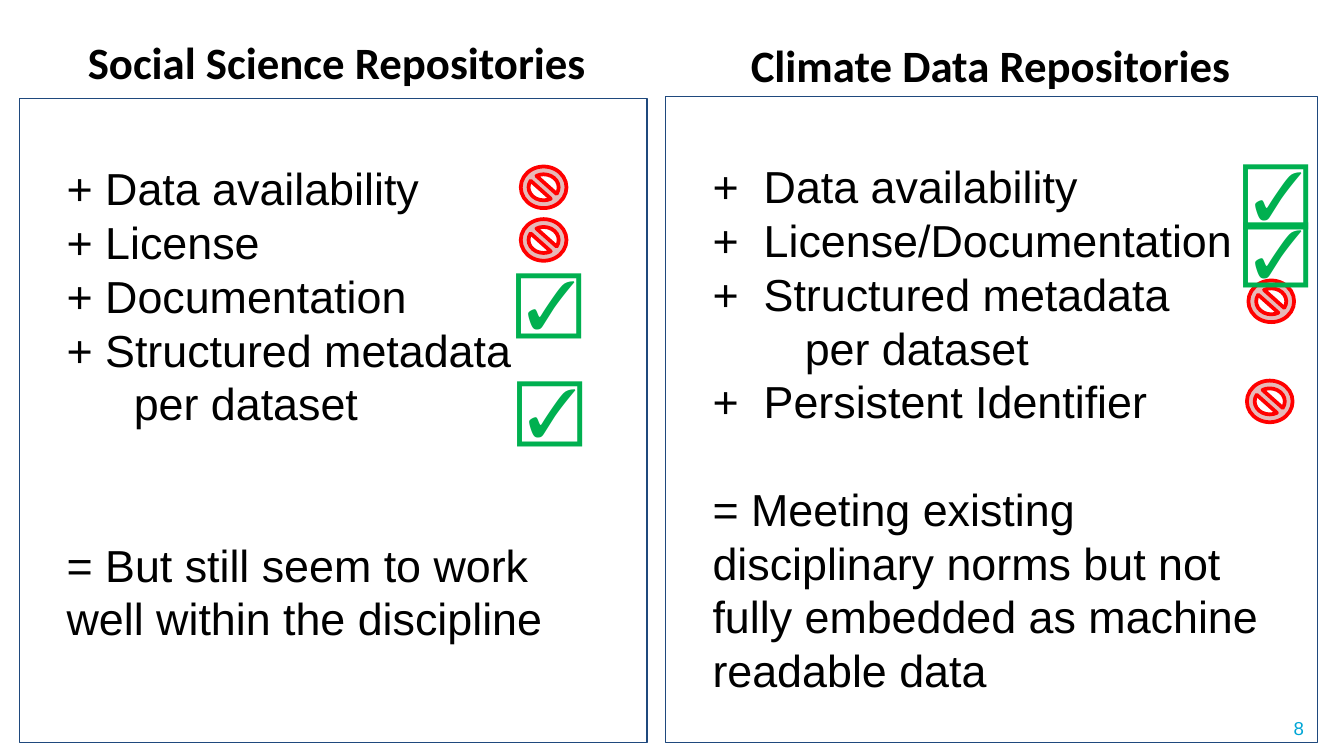
import pptx
import pptx.dml.color
import pptx.enum.shapes
import pptx.enum.text
import pptx.oxml
import pptx.oxml.ns
import pptx.util
from pptx.util import Pt

RGBColor = pptx.dml.color.RGBColor
ALIGN = pptx.enum.text.PP_ALIGN
ANCHOR = pptx.enum.text.MSO_ANCHOR

BLACK = RGBColor(0x00, 0x00, 0x00)
NAVY = RGBColor(0x1F, 0x49, 0x7D)
CYAN = RGBColor(0x00, 0xA6, 0xD6)
GREEN = RGBColor(0x00, 0xB0, 0x50)
RED = RGBColor(0xFF, 0x00, 0x00)
PINK = RGBColor(0xE6, 0xB9, 0xB8)

LINE = 28.8  # height of one line of panel text
MARGIN = 18  # left margin of panel text
SIGN_SIZE = (24.5, 22.3)
CHECK_SIZE = (27.4, 51.1)

# Each text line: (text, left margin, hanging indent, space before)
COLUMNS = [
    {
        "heading": "Social Science Repositories",
        "heading_box": (13.7, 15.1, 333.4, 36),
        "panel_box": (10.5, 52.9, 336.2, 345),
        "lines": [
            ("+ Data availability", MARGIN, 0, 0),
            ("+ License", MARGIN, 0, 0),
            ("+ Documentation", MARGIN, 0, 0),
            ("+ Structured metadata", MARGIN, 0, 0),
            ("per dataset", 54, 0, 0),
            ("= But still seem to work\vwell within the discipline", MARGIN, 0, 2 * LINE),
        ],
        "signs": [(279, 89.2), (279, 117.4)],
        "checks": [(269.3, 134.6), (269.8, 192.5)],
    },
    {
        "heading": "Climate Data Repositories",
        "heading_box": (356.4, 16.6, 348.5, 36),
        "panel_box": (356.5, 51.8, 349.2, 346),
        "lines": [
            ("+\tData availability", MARGIN + 27.4, 27.4, 0),
            ("+\tLicense/Documentation", MARGIN + 27.4, 27.4, 0),
            ("+\tStructured metadata", MARGIN + 27.4, 27.4, 0),
            ("per dataset", 67.4, 0, 0),
            ("+\tPersistent Identifier", MARGIN + 27.4, 27.4, 0),
            (
                "= Meeting existing disciplinary norms but not fully "
                "embedded as machine readable data",
                MARGIN, 0, LINE,
            ),
        ],
        "signs": [(668.8, 150.3), (668, 203.9)],
        "checks": [(658.3, 76.3), (658.3, 107.3)],
    },
]
PAGE_NUMBER = "8"
PAGE_NUMBER_BOX = (523.4, 379.4, 182.2, 21.6)


def place(shape, box):
    shape.left, shape.top, shape.width, shape.height = map(Pt, box)


def write(shape, lines, font="Arial", size=24, color=BLACK, bold=False,
          align=ALIGN.LEFT, anchor=ANCHOR.TOP, inset_top=3.6, line_height=None):
    frame = shape.text_frame
    frame.word_wrap = True
    frame.auto_size = pptx.enum.text.MSO_AUTO_SIZE.NONE
    frame.vertical_anchor = anchor
    frame.margin_left = frame.margin_right = Pt(7.2)
    frame.margin_top, frame.margin_bottom = Pt(inset_top), Pt(3.6)
    for number, (text, left, hanging, before) in enumerate(lines):
        para = frame.add_paragraph() if number else frame.paragraphs[0]
        para.text = text
        properties = para._p.get_or_add_pPr()
        properties.set("marL", str(Pt(left)))
        properties.set("indent", str(-Pt(hanging)))
        properties.append(pptx.oxml.parse_xml(
            "<a:buNone %s/>" % pptx.oxml.ns.nsdecls("a")))
        para.alignment = align
        para.space_before = Pt(before)
        if line_height:
            para.line_spacing = Pt(line_height)
        for span in para.runs:
            span.font.name = font
            span.font.size = Pt(size)
            span.font.bold = bold
            span.font.color.rgb = color


def add_text(page, text, box, **style):
    shape = page.shapes.add_textbox(*map(Pt, box))
    write(shape, [(text, 0, 0, 0)], **style)


def add_sign(page, position):
    sign = page.shapes.add_shape(
        pptx.enum.shapes.MSO_SHAPE.NO_SYMBOL, *map(Pt, position + SIGN_SIZE))
    sign.shadow.inherit = False
    sign.fill.solid()
    sign.fill.fore_color.rgb = PINK
    sign.line.color.rgb = RED
    sign.line.width = Pt(2)


def add_column(page, column, heading, panel):
    place(heading, column["heading_box"])
    write(heading, [(column["heading"], 0, 0, 0)], font="Calibri", bold=True,
          align=ALIGN.CENTER)
    place(panel, column["panel_box"])
    panel.line.color.rgb = NAVY
    panel.line.width = Pt(0.75)
    write(panel, column["lines"], inset_top=LINE + 4.6, line_height=LINE)
    for position in column["signs"]:
        add_sign(page, position)
    for position in column["checks"]:
        add_text(page, "☑", position + CHECK_SIZE, font="Calibri", size=36,
                 color=GREEN)


def main():
    deck = pptx.Presentation()
    deck.slide_width, deck.slide_height = Pt(720), Pt(405)
    page = deck.slides.add_slide(deck.slide_layouts.get_by_name("Comparison"))
    title, *holders = page.placeholders
    title.element.getparent().remove(title.element)
    for column, heading, panel in zip(COLUMNS, holders[::2], holders[1::2]):
        add_column(page, column, heading, panel)
    add_text(page, PAGE_NUMBER, PAGE_NUMBER_BOX, size=10, color=CYAN,
             align=ALIGN.RIGHT, anchor=ANCHOR.MIDDLE)
    deck.save("out.pptx")


if __name__ == "__main__":
    main()
